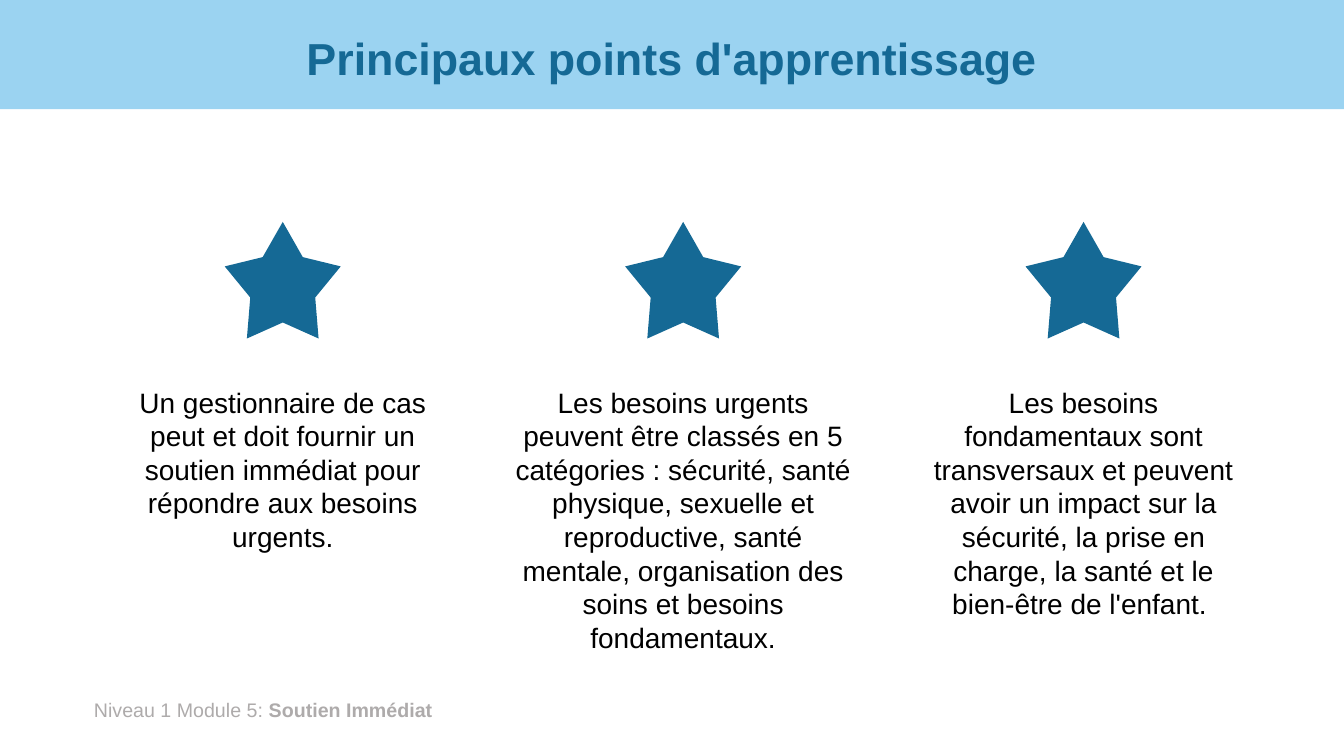
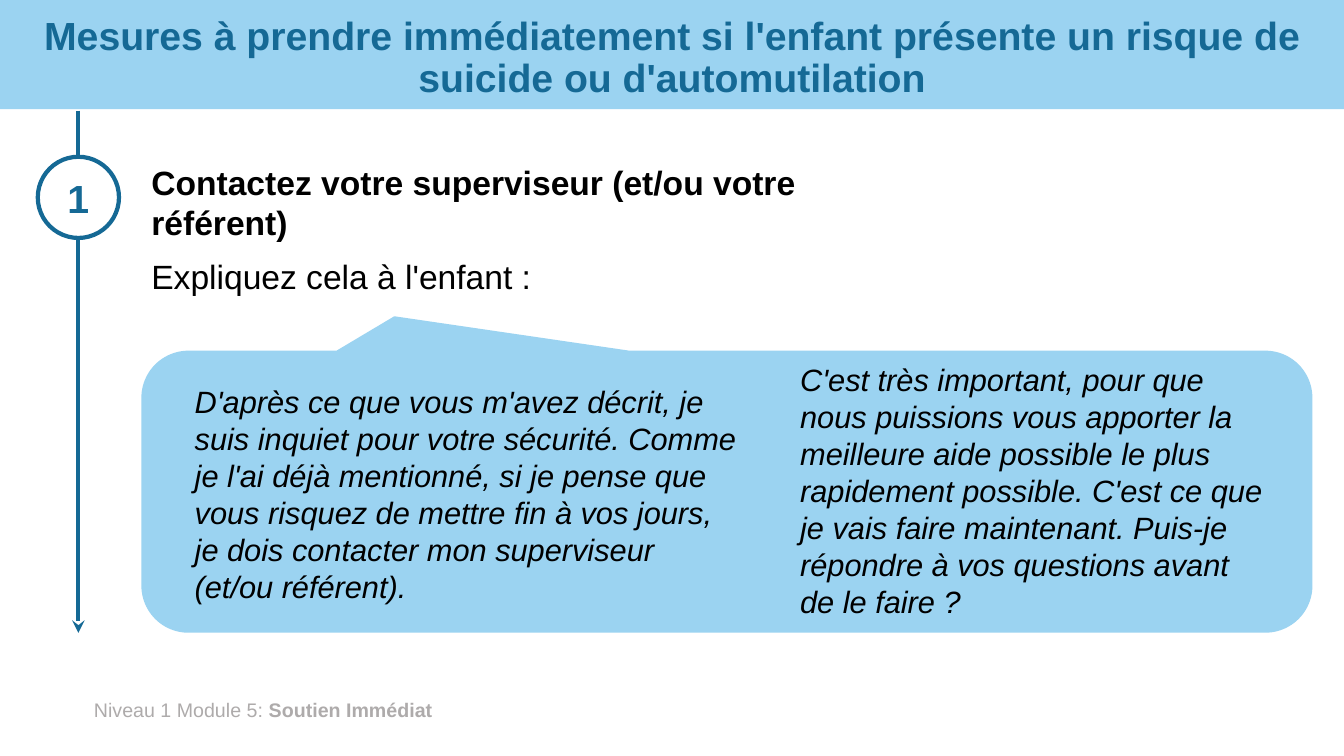
import pptx
import pptx.dml.color
import pptx.enum.shapes
import pptx.enum.text
import pptx.oxml
import pptx.oxml.ns
import pptx.util

Pt = pptx.util.Pt
SHAPES = pptx.enum.shapes.MSO_SHAPE
ALIGN = pptx.enum.text.PP_ALIGN
FIT = pptx.enum.text.MSO_AUTO_SIZE
MIDDLE = pptx.enum.text.MSO_ANCHOR.MIDDLE

FONT = "Arial"
COLORS = {
    "band": "9BD3F1",
    "accent": "156995",
    "text": "000000",
    "footer": "AEABAB",
    "white": "FFFFFF",
}
PAGE_WIDTH, PAGE_HEIGHT = 960, 540
BAND_HEIGHT = 78

LEARNING_POINTS = [
    (242, "Un gestionnaire de cas peut et doit fournir un soutien immédiat pour "
          "répondre aux besoins urgents."),
    (264, "Les besoins urgents peuvent être classés en 5 catégories : sécurité, "
          "santé physique, sexuelle et reproductive, santé mentale, organisation "
          "des soins et besoins fondamentaux."),
    (242, "Les besoins fondamentaux sont transversaux et peuvent avoir un impact "
          "sur la sécurité, la prise en charge, la santé et le bien-être de "
          "l'enfant. "),
]
FIRST_CENTER, COLUMN_STEP = 202, 286
STAR_SIZE = 83

CONCERN = (
    "D'après ce que vous m'avez décrit, je suis inquiet pour votre sécurité. "
    "Comme je l'ai déjà mentionné, si je pense que vous risquez de mettre fin à "
    "vos jours, je dois contacter mon superviseur (et/ou référent)."
)
REASSURANCE = (
    "C'est très important, pour que nous puissions vous apporter la meilleure "
    "aide possible le plus rapidement possible. C'est ce que je vais faire "
    "maintenant. Puis-je répondre à vos questions avant de le faire ?"
)


def rgb(name):
    return pptx.dml.color.RGBColor.from_string(COLORS[name])


def format_span(span, size, color="text", bold=False, italic=False):
    font = span.font
    font.name = FONT
    font.size = Pt(size)
    font.color.rgb = rgb(color)
    font.bold = bold
    font.italic = italic


def add_text(page, left, top, width, height, paragraphs, size, color="text",
             align=ALIGN.LEFT, italic=False, space_before=0):
    """Add a text box; each paragraph is a list of (text, bold) spans."""
    box = page.shapes.add_textbox(Pt(left), Pt(top), Pt(width), Pt(height))
    frame = box.text_frame
    frame.word_wrap = True
    frame.auto_size = FIT.SHAPE_TO_FIT_TEXT
    for index, spans in enumerate(paragraphs):
        para = frame.add_paragraph() if index else frame.paragraphs[0]
        para.alignment = align
        para.space_before = Pt(space_before)
        for text, bold in spans:
            span = para.add_run()
            span.text = text
            format_span(span, size, color, bold, italic)
    return box


def add_shape(page, kind, left, top, width, height, fill, line=None, adjustments=()):
    shape = page.shapes.add_shape(kind, Pt(left), Pt(top), Pt(width), Pt(height))
    shape.shadow.inherit = False
    shape.fill.solid()
    shape.fill.fore_color.rgb = rgb(fill)
    if line:
        shape.line.color.rgb = rgb(line)
        shape.line.width = Pt(3)
    else:
        shape.line.fill.background()
    for index, value in enumerate(adjustments):
        shape.adjustments[index] = value
    return shape


def add_arrow(page, x, top, bottom):
    arrow = page.shapes.add_connector(
        pptx.enum.shapes.MSO_CONNECTOR.STRAIGHT, Pt(x), Pt(top), Pt(x), Pt(bottom))
    arrow.line.color.rgb = rgb("accent")
    arrow.line.width = Pt(3)
    tail = pptx.oxml.parse_xml(
        f'<a:tailEnd {pptx.oxml.ns.nsdecls("a")} type="stealth"/>')
    arrow.line._get_or_add_ln().append(tail)
    effects = pptx.oxml.parse_xml(f'<a:effectLst {pptx.oxml.ns.nsdecls("a")}/>')
    arrow._element.spPr.append(effects)


def add_step_number(page, number, left, top, size):
    circle = add_shape(page, SHAPES.OVAL, left, top, size, size, "white", "accent")
    frame = circle.text_frame
    frame.text = number
    frame.vertical_anchor = MIDDLE
    para = frame.paragraphs[0]
    para.alignment = ALIGN.CENTER
    format_span(para.runs[0], 28, "accent", bold=True)


def move_to_layout(page, shape):
    """Make a shape part of the page's layout, so that every page shows it."""
    page.slide_layout.shapes._spTree.append(shape._element)


def add_band_and_footer(page):
    band = add_shape(page, SHAPES.RECTANGLE, 0, 0, PAGE_WIDTH, BAND_HEIGHT, "band")
    footer = add_text(
        page, 60, 495, 328, 24,
        [[("Niveau 1 Module 5: ", False), ("Soutien Immédiat", True)]], 14, "footer")
    for shape in (band, footer):
        move_to_layout(page, shape)


def add_page(deck, title, size, left, top, width, height):
    page = deck.slides.add_slide(deck.slide_layouts[5])
    box = page.shapes.title
    box.left, box.top = Pt(left), Pt(top)
    box.width, box.height = Pt(width), Pt(height)
    frame = box.text_frame
    frame.text = title
    frame.word_wrap = True
    frame.auto_size = FIT.NONE
    frame.vertical_anchor = MIDDLE
    para = frame.paragraphs[0]
    para.alignment = ALIGN.CENTER
    para.line_spacing = 0.9
    format_span(para.runs[0], size, "accent", bold=True)
    return page


def add_learning_points(page):
    for index, (width, text) in enumerate(LEARNING_POINTS):
        center = FIRST_CENTER + index * COLUMN_STEP
        add_shape(page, SHAPES.STAR_5_POINT, center - STAR_SIZE / 2, 158.5,
                  STAR_SIZE, STAR_SIZE, "accent", adjustments=(0.28, 1.05, 1.11))
        add_text(page, center - width / 2, 271.5, width, 128, [[(text, False)]], 20,
                 align=ALIGN.CENTER)


def add_supervisor_step(page):
    add_text(page, 101, 112, 563, 80,
             [[("Contactez votre superviseur (et/ou votre référent)", True)],
              [("Expliquez cela à l'enfant :", False)]], 24, space_before=10)
    add_arrow(page, 56, 79, 452)
    add_shape(page, SHAPES.ROUNDED_RECTANGULAR_CALLOUT, 101, 250.5, 836.5, 201.5,
              "band", adjustments=(-0.284, -0.622, 0.167))
    add_step_number(page, "1", 27, 112, 58)
    for left, top, width, text in ((132, 270, 402, CONCERN),
                                   (564.5, 254, 345.5, REASSURANCE)):
        add_text(page, left, top, width, 140, [[(text, False)]], 22, italic=True)


def main():
    deck = pptx.Presentation()
    deck.slide_width, deck.slide_height = Pt(PAGE_WIDTH), Pt(PAGE_HEIGHT)

    page = add_page(deck, "Principaux points d'apprentissage", 32, 66, 9, 828, 68.5)
    add_band_and_footer(page)
    add_learning_points(page)

    page = add_page(
        deck, "Mesures à prendre immédiatement si l'enfant présente un risque de "
        "suicide ou d'automutilation", 28, 0, -10, PAGE_WIDTH, 104)
    add_supervisor_step(page)

    deck.save("out.pptx")


if __name__ == "__main__":
    main()
